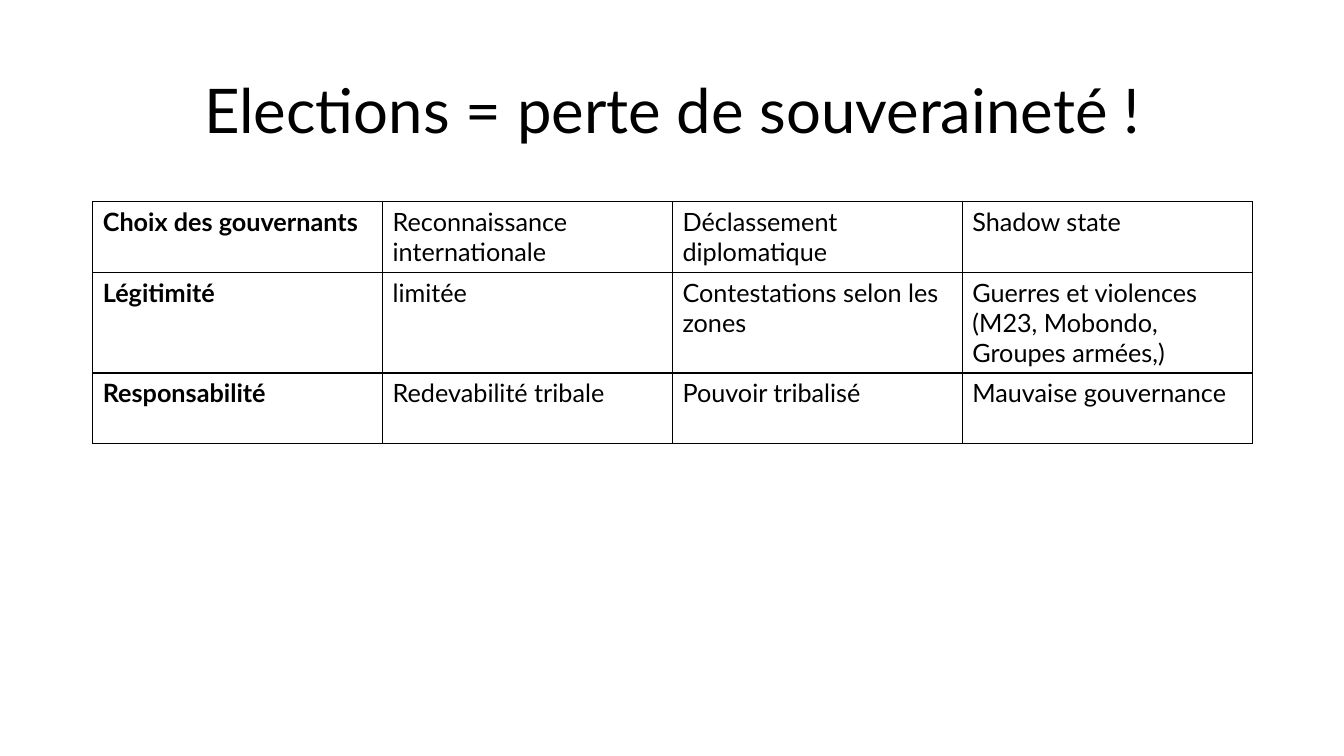
from lxml.etree import SubElement
from pptx import Presentation
from pptx.dml.color import RGBColor
from pptx.enum.text import MSO_ANCHOR, PP_ALIGN
from pptx.oxml.ns import qn
from pptx.util import Inches, Pt

WIDTH, HEIGHT = 13.33, 7.5
LEFT, CONTENT_WIDTH = 0.92, 11.5
FONT, BLACK = "Lato", "000000"
LINE_HEIGHT, CELL_PADDING = 0.3, 0.1

TITLE = "Elections = perte de souveraineté !"
# Each row: its height in text lines, then its cells
ROWS = [
    (2, ["Choix des gouvernants", "Reconnaissance internationale",
         "Déclassement diplomatique", "Shadow state"]),
    (3, ["Légitimité", "limitée", "Contestations selon les zones",
         "Guerres et violences (M23, Mobondo, Groupes armées,)"]),
    (2, ["Responsabilité", "Redevabilité tribale", "Pouvoir tribalisé",
         "Mauvaise gouvernance"]),
]


def colour(hex_code):
    return RGBColor.from_string(hex_code)


def add_text(para, text, size, bold=False):
    span = para.add_run()
    span.text = text
    span.font.name = FONT
    span.font.size = Pt(size)
    span.font.bold = bold
    span.font.color.rgb = colour(BLACK)


def set_borders(cell, hex_code, points):
    properties = cell._tc.get_or_add_tcPr()
    for side in ("lnL", "lnR", "lnT", "lnB"):
        line = SubElement(properties, qn(f"a:{side}"), w=str(Pt(points)))
        fill = SubElement(line, qn("a:solidFill"))
        SubElement(fill, qn("a:srgbClr"), val=hex_code)


def fill_title(page):
    title = page.shapes.title
    title.left, title.top = Inches(LEFT), Inches(0.4)
    title.width, title.height = Inches(CONTENT_WIDTH), Inches(1.45)
    frame = title.text_frame
    frame.word_wrap = True
    frame.vertical_anchor = MSO_ANCHOR.MIDDLE
    para = frame.paragraphs[0]
    para.alignment = PP_ALIGN.CENTER
    para.line_spacing = 0.9
    add_text(para, TITLE, 44)


def add_grid(page):
    heights = [CELL_PADDING + lines * LINE_HEIGHT for lines, _ in ROWS]
    table = page.shapes.add_table(
        len(ROWS), len(ROWS[0][1]), Inches(LEFT), Inches(2),
        Inches(CONTENT_WIDTH), Inches(sum(heights))).table
    table.first_row = table.horz_banding = False
    table.first_col = True
    for row, height, (_, texts) in zip(table.rows, heights, ROWS):
        row.height = Inches(height)
        for column, (cell, text) in enumerate(zip(row.cells, texts)):
            set_borders(cell, BLACK, 1)
            cell.fill.background()
            add_text(cell.text_frame.paragraphs[0], text, 18, bold=column == 0)


def main():
    deck = Presentation()
    deck.slide_width, deck.slide_height = Inches(WIDTH), Inches(HEIGHT)
    page = deck.slides.add_slide(deck.slide_layouts[5])  # title only
    fill_title(page)
    add_grid(page)
    deck.save("out.pptx")


if __name__ == "__main__":
    main()
